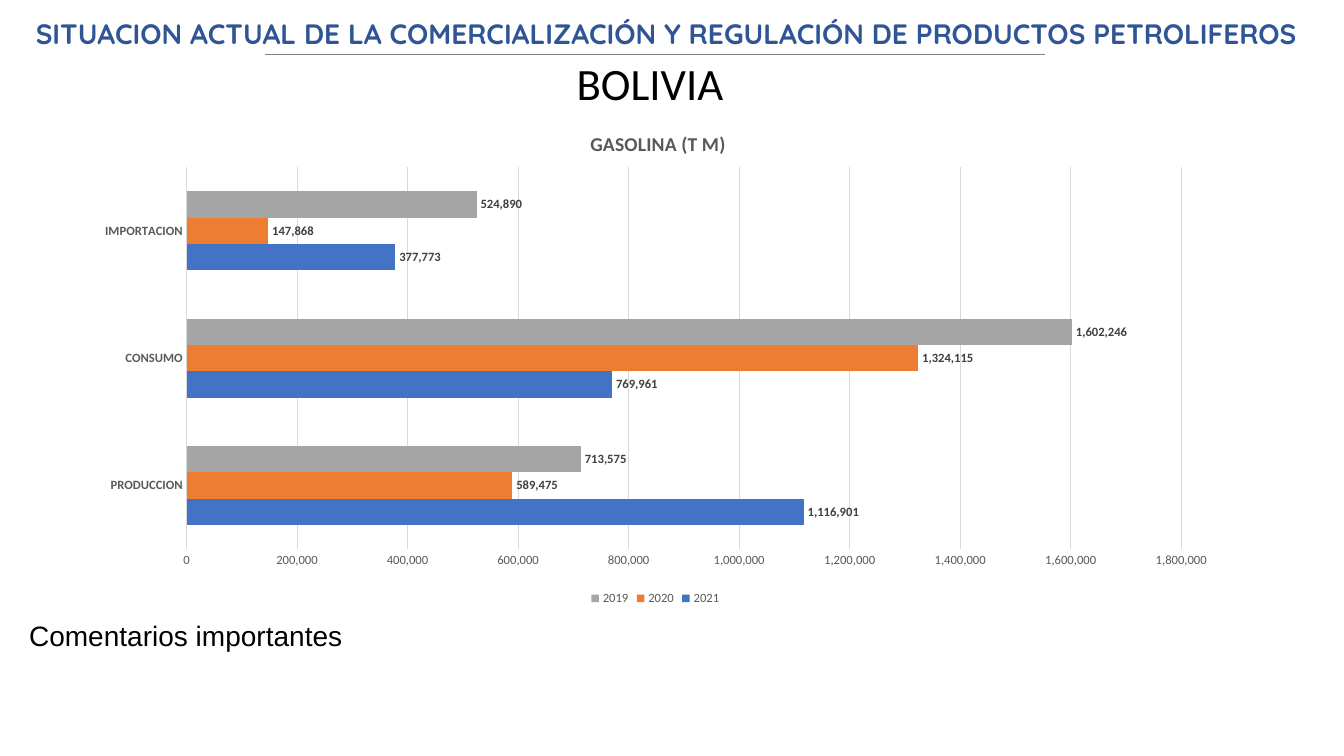
from lxml import etree
from pptx import Presentation
from pptx.chart.data import CategoryChartData
from pptx.dml.color import RGBColor
from pptx.enum.chart import XL_CHART_TYPE, XL_LABEL_POSITION, XL_LEGEND_POSITION, XL_TICK_MARK
from pptx.enum.shapes import MSO_CONNECTOR
from pptx.enum.text import MSO_ANCHOR, PP_ALIGN
from pptx.oxml import parse_xml
from pptx.oxml.ns import nsdecls, qn
from pptx.util import Inches, Pt

BAR = XL_CHART_TYPE.BAR_CLUSTERED
OUT = XL_LABEL_POSITION.OUTSIDE_END
BOTTOM = XL_LEGEND_POSITION.BOTTOM
NONE = XL_TICK_MARK.NONE
LINE = MSO_CONNECTOR.STRAIGHT
TOP, MID = MSO_ANCHOR.TOP, MSO_ANCHOR.MIDDLE
LEFT, CENTER, JUSTIFY = PP_ALIGN.LEFT, PP_ALIGN.CENTER, PP_ALIGN.JUSTIFY

TEXTS = [
    ("SITUACION ACTUAL DE LA COMERCIALIZACIÓN Y REGULACIÓN DE PRODUCTOS PETROLIFEROS",
     (0, -0.32, 13.22, 1.35), (20, "2F5597", True, "Quicksand"), CENTER, MID, 0.9),
    ("BOLIVIA", (5.62, 0.5, 1.76, 0.64), (32, "000000", False, "Calibri"), LEFT, TOP, 1.0),
    ("Comentarios importantes", (0.19, 6.06, 12.96, 0.44),
     (20, "000000", False, "Arial"), JUSTIFY, TOP, 1.07),
]
RULE = (2.63, 0.54, 10.36, 0.54)
AREA = (0.83, 1.06, 11.34, 4.99)
TITLE = "GASOLINA (T M)"
CATS = ["PRODUCCION", "CONSUMO", "IMPORTACION"]
SERIES = [
    ("2021", (1116901, 769961, 377773), "4472C4"),
    ("2020", (589475, 1324115, 147868), "ED7D31"),
    ("2019", (713575, 1602246, 524890), "A5A5A5"),
]
GRAY, PALE, DARK = "595959", "D9D9D9", "404040"
FORMAT = "#,##0"


def color(text):
    return RGBColor.from_string(text)


def style(font, size, hue, bold=False, face="Calibri"):
    font.size = Pt(size)
    font.color.rgb = color(hue)
    font.bold = bold
    font.name = face


def stroke(line, hue, width):
    line.color.rgb = color(hue)
    line.width = Pt(width)


def layout(**parts):
    node = parse_xml(f'<c:layout {nsdecls("c")}><c:manualLayout/></c:layout>')
    for name, val in parts.items():
        etree.SubElement(node[0], qn("c:" + name)).set("val", str(val))
    return node


def place(parent, node, before):
    for old in parent.findall(qn("c:layout")):
        parent.remove(old)
    parent.insert(before, node)


def add_text(slide, text, box, look, align, anchor, space):
    frame = slide.shapes.add_textbox(*map(Inches, box)).text_frame
    frame.word_wrap = True
    frame.vertical_anchor = anchor
    frame.text = text
    para = frame.paragraphs[0]
    para.alignment = align
    para.line_spacing = space
    style(para.runs[0].font, *look)


def add_rule(slide):
    rule = slide.shapes.add_connector(LINE, *map(Inches, RULE))
    stroke(rule.line, "808080", 1)
    etree.SubElement(rule._element.spPr, qn("a:effectLst"))


def add_chart(slide):
    data = CategoryChartData(number_format=FORMAT)
    data.categories = CATS
    for name, vals, _ in SERIES:
        data.add_series(name, vals)
    chart = slide.shapes.add_chart(BAR, *map(Inches, AREA), data).chart
    style(chart.font, 10, "000000")

    chart.has_title = True
    frame = chart.chart_title.text_frame
    frame.text = TITLE
    style(frame.paragraphs[0].runs[0].font, 14, GRAY, True)
    chart.chart_title.include_in_layout = False
    place(chart.chart_title._element,
          layout(xMode="edge", yMode="edge", x=0.44, y=0.04), 1)

    chart.has_legend = True
    chart.legend.position = BOTTOM
    chart.legend.include_in_layout = False
    style(chart.legend.font, 9, GRAY)

    for axis, bold in ((chart.category_axis, True), (chart.value_axis, False)):
        axis.major_tick_mark = axis.minor_tick_mark = NONE
        style(axis.tick_labels.font, 9, GRAY, bold)
    stroke(chart.category_axis.format.line, PALE, 0.75)
    scale = chart.value_axis
    scale.format.line.fill.background()
    scale.minimum_scale, scale.maximum_scale, scale.major_unit = 0, 1800000, 200000
    scale.tick_labels.number_format = FORMAT
    scale.tick_labels.number_format_is_linked = False
    stroke(scale.major_gridlines.format.line, PALE, 0.75)

    plot = chart.plots[0]
    plot.gap_width = 182
    plot.vary_by_categories = False
    for bars, (_, _, hue) in zip(plot.series, SERIES):
        bars.format.fill.solid()
        bars.format.fill.fore_color.rgb = color(hue)
        tags = bars.data_labels
        tags.show_value = True
        tags.position = OUT
        tags.number_format = FORMAT
        tags.number_format_is_linked = False
        style(tags.font, 9, DARK, True)
    place(plot._element.getparent(),
          layout(layoutTarget="inner", xMode="edge", yMode="edge",
                 x=0.09, y=0.12, w=0.87, h=0.76), 0)


def main():
    deck = Presentation()
    deck.slide_width, deck.slide_height = Inches(13.33), Inches(7.5)
    slide = deck.slides.add_slide(deck.slide_layouts[6])
    for item in TEXTS:
        add_text(slide, *item)
    add_rule(slide)
    add_chart(slide)
    deck.save("out.pptx")


if __name__ == "__main__":
    main()
